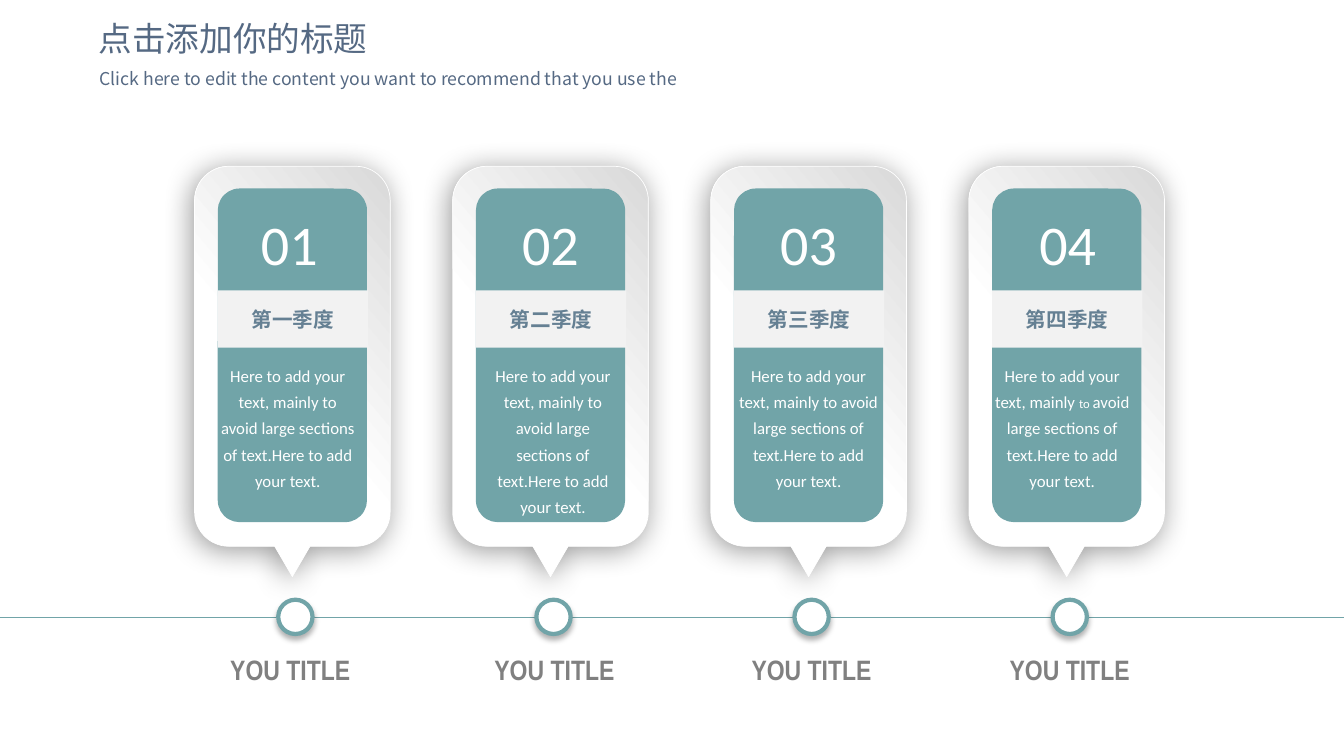
from lxml import etree
from pptx import Presentation
from pptx.dml.color import RGBColor
from pptx.enum.shapes import MSO_CONNECTOR, MSO_SHAPE
from pptx.enum.text import MSO_ANCHOR, MSO_AUTO_SIZE, PP_ALIGN
from pptx.oxml.ns import qn
from pptx.util import Inches, Pt

WHITE = RGBColor(0xFF, 0xFF, 0xFF)
SILVER = RGBColor(0xD9, 0xD9, 0xD9)
PALE = RGBColor(0xF2, 0xF2, 0xF2)
TEAL = RGBColor(0x71, 0xA4, 0xA8)
SLATE = RGBColor(0x65, 0x80, 0x93)
NAVY = RGBColor(0x55, 0x69, 0x83)
GREY = RGBColor(0x80, 0x80, 0x80)
CENTER, LEFT = PP_ALIGN.CENTER, PP_ALIGN.LEFT
MIDDLE, GROW = MSO_ANCHOR.MIDDLE, MSO_AUTO_SIZE.SHAPE_TO_FIT_TEXT
OVAL, ROUNDED, RECTANGLE = MSO_SHAPE.OVAL, MSO_SHAPE.ROUNDED_RECTANGLE, MSO_SHAPE.RECTANGLE
STRAIGHT = MSO_CONNECTOR.STRAIGHT
LATIN, NARROW, HAN, HEADING = "Calibri", "Arial Narrow", "Noto Sans CJK SC", "Noto Sans CJK JP"

HEADINGS = [
    ("点击添加你的标题", 24, (0.88, 0.17, 8.62, 0.47)),
    ("Click here to edit the content you want to recommend that you use the",
     12.6, (0.89, 0.65, 8.62, 0.33)),
]
CAPTION = "YOU TITLE"
DETAIL = [("Here to add your text, mainly to avoid large sections of text."
           "Here to add your text.", 12)]
SMALL_WORD = [("Here to add your text, mainly ", 12), ("to ", 9),
              ("avoid large sections of text.Here to add your text.", 12)]
# Each card: number, quarter, detail runs, number offset, detail offset and size, caption offset
CARDS = [
    ("01", "第一季度", DETAIL, 0.40, (0.14, 1.57, 1.40), 0.00),
    ("02", "第二季度", DETAIL, 0.43, (0.27, 1.45, 1.66), 0.06),
    ("03", "第三季度", DETAIL, 0.43, (0.16, 1.62, 1.40), 0.05),
    ("04", "第四季度", SMALL_WORD, 0.44, (0.13, 1.59, 1.40), 0.05),
]
SLIDE_WIDTH, SLIDE_HEIGHT = 13.33, 7.5
CARD_LEFT, CARD_TOP, CARD_PITCH = 1.93, 1.65, 2.56
CARD_WIDTH, CARD_HEIGHT, CARD_RADIUS = 1.94, 3.77, 0.34
TAIL_WIDTH, TAIL_HEIGHT = 0.35, 0.3
TIMELINE, DOT = 6.12, 0.34
CURVE = 0.55


def write(frame, runs, font_name, color, align=CENTER, bold=False, spacing=None):
    frame.word_wrap = True
    para = frame.paragraphs[0]
    para.alignment = align
    if spacing:
        para.line_spacing = spacing
    for words, size in runs:
        span = para.add_run()
        span.text = words
        span.font.size = Pt(size)
        span.font.bold = bold
        span.font.color.rgb = color
        span.font.name = font_name
        east = etree.SubElement(span.font._element, qn("a:ea"))
        east.set("typeface", font_name)


def add_text(shapes, place, *args, **kwargs):
    box = shapes.add_textbox(*map(Inches, place))
    write(box.text_frame, *args, **kwargs)
    box.text_frame.auto_size = GROW


def add_block(shapes, kind, place, fill, line=None):
    block = shapes.add_shape(kind, *map(Inches, place))
    block.shadow.inherit = False
    block.fill.solid()
    block.fill.fore_color.rgb = fill
    if line:
        block.line.color.rgb = line
        block.line.width = Pt(3)
    else:
        block.line.fill.background()
    return block


def cast_shadow(shape, alpha, blur, distance, angle):
    shape.shadow.inherit = False
    effects = shape._element.spPr.find(qn("a:effectLst"))
    shadow = etree.SubElement(effects, qn("a:outerShdw"), blurRad=str(Pt(blur)),
                              dist=str(Pt(distance)), dir=str(angle * 60000),
                              algn="ctr", rotWithShape="0")
    color = etree.SubElement(shadow, qn("a:srgbClr"), val="000000")
    etree.SubElement(color, qn("a:alpha"), val=str(alpha * 1000))


def round_corner(segment, start, end, across_first):
    corner = (end[0], start[1]) if across_first else (start[0], end[1])
    controls = [[int(a + CURVE * (b - a)) for a, b in zip(point, corner)]
                for point in (start, end)]
    segment.tag = qn("a:cubicBezTo")
    for place, (x, y) in enumerate(controls):
        segment.insert(place, segment.makeelement(qn("a:pt"), {"x": str(x), "y": str(y)}))


def add_callout(shapes, left):
    right, bottom = left + CARD_WIDTH, CARD_TOP + CARD_HEIGHT
    middle, half = left + CARD_WIDTH / 2, TAIL_WIDTH / 2
    near_x, far_x = left + CARD_RADIUS, right - CARD_RADIUS
    near_y, far_y = CARD_TOP + CARD_RADIUS, bottom - CARD_RADIUS
    outline = [(near_x, CARD_TOP), (far_x, CARD_TOP), (right, near_y), (right, far_y),
               (far_x, bottom), (middle + half, bottom), (middle, bottom + TAIL_HEIGHT),
               (middle - half, bottom), (near_x, bottom), (left, far_y), (left, near_y),
               (near_x, CARD_TOP)]
    points = [(Inches(x), Inches(y)) for x, y in outline]
    builder = shapes.build_freeform(*points[0])
    builder.add_line_segments(points[1:], close=True)
    callout = builder.convert_to_shape()
    segments = list(callout._element.spPr.iter(qn("a:lnTo")))
    local = [(x - Inches(left), y - Inches(CARD_TOP)) for x, y in points]
    for end, across_first in ((2, True), (4, False), (9, True), (11, False)):
        round_corner(segments[end - 1], local[end - 1], local[end], across_first)
    callout.fill.gradient()
    callout.fill.gradient_angle = 40
    for stop, position, color in zip(callout.fill.gradient_stops, (0.45, 1), (WHITE, SILVER)):
        stop.position = position
        stop.color.rgb = color
    callout.line.color.rgb = WHITE
    callout.line.width = Pt(0.5)
    etree.SubElement(callout._element.spPr.find(qn("a:ln")), qn("a:round"))
    cast_shadow(callout, 40, 21, 3, 135)


def add_card(page, index, card):
    number, quarter, detail, number_shift, detail_place, caption_shift = card
    detail_shift, detail_width, detail_height = detail_place
    left = CARD_LEFT + index * CARD_PITCH
    shapes = page.shapes.add_group_shape().shapes
    add_callout(shapes, left)
    panel = add_block(shapes, ROUNDED, (left + 0.23, 1.87, 1.48, 3.31), TEAL)
    panel.adjustments[0] = 0.146
    band = add_block(shapes, RECTANGLE, (left + 0.23, 2.88, 1.49, 0.57), PALE)
    band.text_frame.vertical_anchor = MIDDLE
    write(band.text_frame, [(quarter, 14.7)], HAN, SLATE, bold=True)
    add_text(shapes, (left + number_shift, 2.03, 1.08, 0.77), [(number, 40)], LATIN, WHITE)
    add_text(shapes, (left + detail_shift, 3.52, detail_width, detail_height), detail,
             LATIN, WHITE, spacing=1.3)
    dot = add_block(page.shapes, OVAL, (left + 0.83, TIMELINE - DOT / 2, DOT, DOT),
                    WHITE, TEAL)
    cast_shadow(dot, 29, 4, 3, 90)
    add_text(page.shapes, (left + caption_shift, 6.26, 1.9, 0.6), [(CAPTION, 20)], NARROW,
             GREY, bold=True, spacing=1.5)


def main():
    """Build the quarterly timeline slide."""
    deck = Presentation()
    deck.slide_width, deck.slide_height = Inches(SLIDE_WIDTH), Inches(SLIDE_HEIGHT)
    page = deck.slides.add_slide(deck.slide_layouts[6])
    axis = page.shapes.add_connector(STRAIGHT, 0, Inches(TIMELINE), Inches(SLIDE_WIDTH),
                                     Inches(TIMELINE))
    axis.line.color.rgb = TEAL
    axis.line.width = Pt(0.5)
    etree.SubElement(axis._element.spPr, qn("a:effectLst"))
    for index, card in enumerate(CARDS):
        add_card(page, index, card)
    for words, size, place in HEADINGS:
        box = page.shapes.add_textbox(*map(Inches, place))
        write(box.text_frame, [(words, size)], HEADING, NAVY, align=LEFT, spacing=0.9)
    deck.save("out.pptx")


if __name__ == "__main__":
    main()
